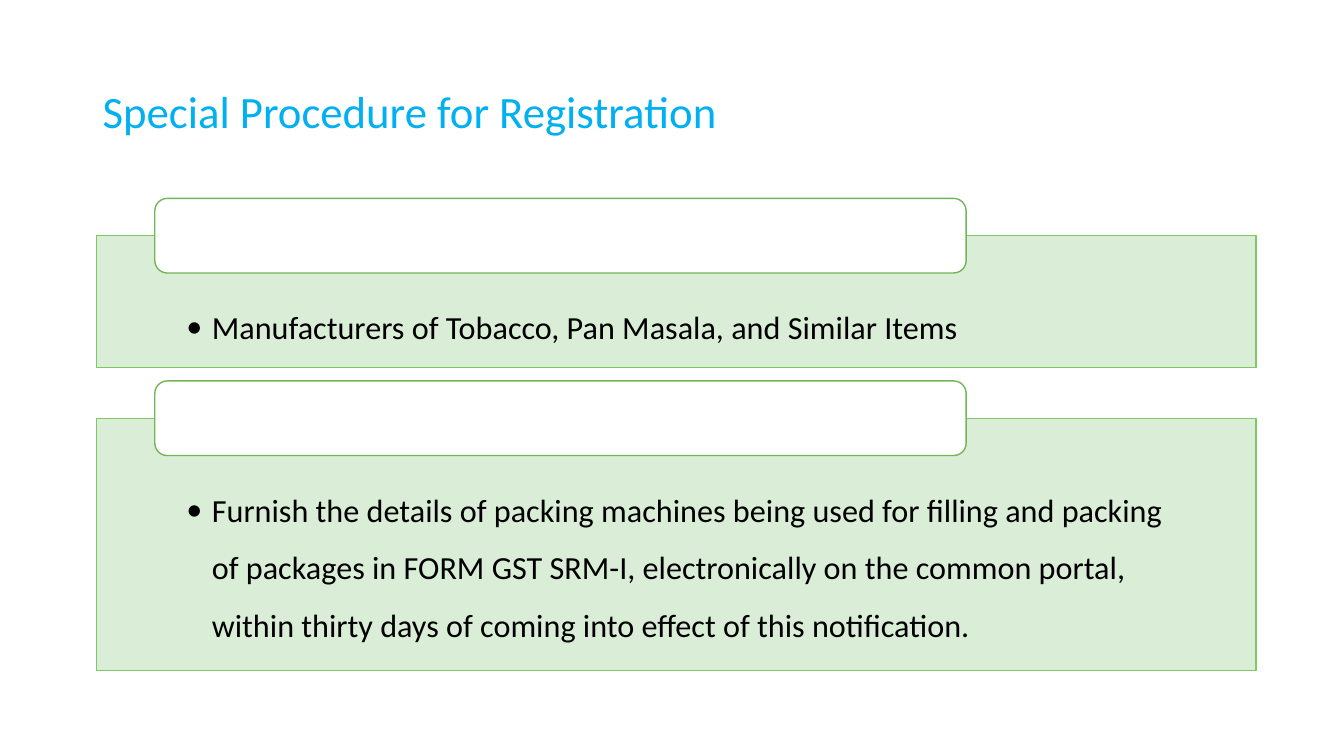
from lxml import etree
from pptx import Presentation
from pptx.dml.color import RGBColor
from pptx.enum.shapes import MSO_SHAPE
from pptx.enum.text import MSO_ANCHOR, MSO_AUTO_SIZE, PP_ALIGN
from pptx.oxml.ns import qn
from pptx.util import Cm, Pt

RECT = MSO_SHAPE.RECTANGLE
ROUNDED = MSO_SHAPE.ROUNDED_RECTANGLE
TOP = MSO_ANCHOR.TOP
MIDDLE = MSO_ANCHOR.MIDDLE
NO_FIT = MSO_AUTO_SIZE.NONE
LEFT = PP_ALIGN.LEFT

FONT = "Calibri"
TAB_HEIGHT = 1.88
PANEL_LEFT, PANEL_WIDTH, PANELS_TOP = 2.44, 29.21, 5.94
PANEL_GAP = 2.21 
PANELS = [
    (3.33, "Manufacturers of Tobacco, Pan Masala, and Similar Items"),
    (6.35, "Furnish the details of packing machines being used for filling "
           "and packing of packages in FORM GST SRM-I, electronically on the "
           "common portal, within thirty days of coming into effect of this "
           "notification."),
]


def rgb(value):
    return RGBColor.from_string(value)


def write_text(tf, text, size, color, spacing, anchor=TOP, bullet=False):
    tf.word_wrap = True
    tf.auto_size = NO_FIT
    tf.vertical_anchor = anchor
    p = tf.paragraphs[0]
    p.alignment = LEFT
    p.line_spacing = spacing
    r = p.add_run()
    r.text = text
    r.font.name = FONT
    r.font.size = Pt(size)
    r.font.color.rgb = rgb(color)
    if bullet:
        pPr = p._p.get_or_add_pPr()
        pPr.set("marL", str(Cm(0.64)))
        pPr.set("indent", str(-Cm(0.64)))
        etree.SubElement(pPr, qn("a:buFont")).set("typeface", FONT)
        etree.SubElement(pPr, qn("a:buChar")).set("char", "•")


def add_box(s, kind, left, top, width, height, fill, line, opacity=100):
    sp = s.shapes.add_shape(kind, Cm(left), Cm(top), Cm(width), Cm(height))
    sp.shadow.inherit = False
    sp.fill.solid()
    sp.fill.fore_color.rgb = rgb(fill)
    sp.line.color.rgb = rgb(line)
    sp.line.width = Pt(1)
    if opacity < 100:
        color = sp.fill._xPr.find(qn("a:solidFill"))[0]
        etree.SubElement(color, qn("a:alpha")).set("val", str(opacity * 1000))
    return sp


def add_title(s, left, top, width, height):
    sp = s.shapes.title
    sp.left, sp.top, sp.width, sp.height = Cm(left), Cm(top), Cm(width), Cm(height)
    write_text(sp.text_frame, "Special Procedure for Registration",
               size=32, color="00B0F0", spacing=0.9, anchor=MIDDLE)


def add_panel(s, left, top, width, height, text):
    sp = add_box(s, RECT, left, top, width, height, "D7ECD3", "7CCA62", opacity=90)
    tf = sp.text_frame
    tf.margin_left = tf.margin_right = Cm(2.26)
    tf.margin_top, tf.margin_bottom = Cm(1.32), Cm(0.46)
    write_text(tf, text, size=23, color="000000", spacing=1.5, bullet=True)
    add_box(s, ROUNDED, left + width * 0.05, top - TAB_HEIGHT / 2,
            width * 0.7, TAB_HEIGHT, "FFFFFF", "71B759")


def main():
    prs = Presentation()
    prs.slide_width, prs.slide_height = Cm(33.87), Cm(19.05)
    s = prs.slides.add_slide(prs.slide_layouts[5])
    add_title(s, 2.33, 1.02, 29.21, 3.68)
    top = PANELS_TOP
    for height, text in PANELS:
        add_panel(s, PANEL_LEFT, top, PANEL_WIDTH, height, text)
        top += height + 1.27
    prs.save("out.pptx")


if __name__ == "__main__":
    main()
